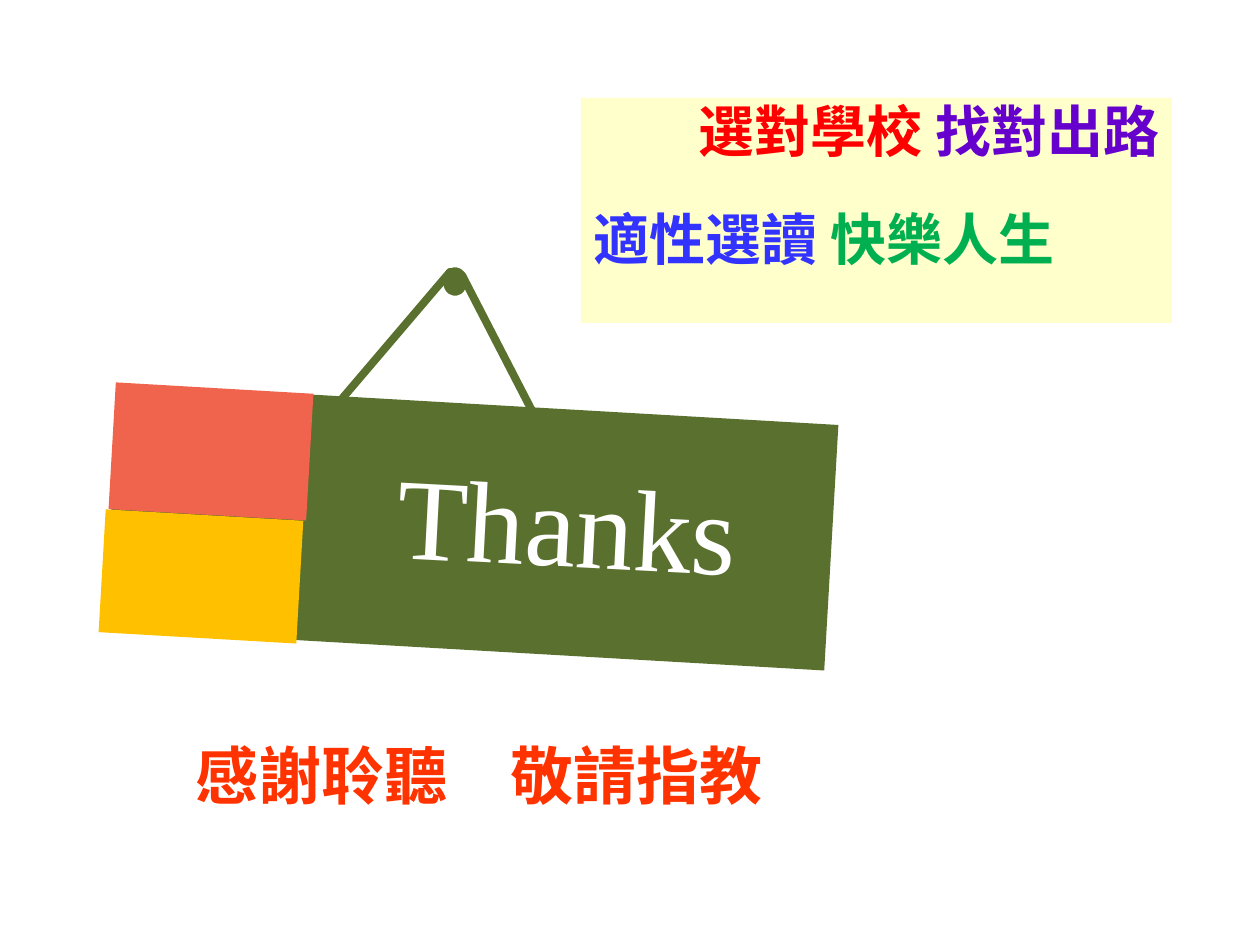
from lxml import etree
from pptx import Presentation
from pptx.dml.color import RGBColor
from pptx.enum.shapes import MSO_SHAPE
from pptx.enum.text import MSO_ANCHOR, MSO_AUTO_SIZE, PP_ALIGN
from pptx.oxml.ns import qn
from pptx.util import Pt

RECTANGLE = MSO_SHAPE.RECTANGLE
ELLIPSE = MSO_SHAPE.OVAL
MIDDLE, TOP = MSO_ANCHOR.MIDDLE, MSO_ANCHOR.TOP
LEFT, CENTER, RIGHT = PP_ALIGN.LEFT, PP_ALIGN.CENTER, PP_ALIGN.RIGHT
NO_FIT = MSO_AUTO_SIZE.NONE
SCALE = 914400 / 126
TILT = 3.3
SERIF, SANS, CJK = "Times New Roman", "Arial", "Noto Sans CJK SC"
COLORS = {
    "board": "5A702E", "amber": "FFC000", "coral": "F0644D", "cream": "FFFFCC",
    "white": "FFFFFF", "orange": "FF3300", "red": "FF0000", "purple": "6600CC",
    "blue": "3333FF", "green": "00B050",
}


def emu(px):
    return round(px * SCALE)


def color(name):
    return RGBColor.from_string(COLORS[name])


class ClosingPage:
    def __init__(self, deck):
        self.page = deck.slides.add_slide(deck.slide_layouts[5])
        self.shapes = self.page.shapes

    def outline(self, shape, name):
        shape.line.color.rgb = color(name)
        shape.line.width = Pt(4.5)

    def shape(self, kind, bounds, fill, rotation=0, line=None):
        shape = self.shapes.add_shape(kind, *map(emu, bounds))
        shape.shadow.inherit = False
        shape.rotation = rotation
        shape.fill.solid()
        shape.fill.fore_color.rgb = color(fill)
        if line:
            self.outline(shape, line)
        else:
            shape.line.fill.background()
        return shape

    def rope(self, points, line):
        builder = self.shapes.build_freeform(*points[0], scale=SCALE)
        builder.add_line_segments(points[1:], close=False)
        rope = builder.convert_to_shape()
        rope.shadow.inherit = False
        rope.fill.background()
        self.outline(rope, line)

    def title(self, text, bounds, rotation):
        title = self.shapes.title
        title.left, title.top, title.width, title.height = map(emu, bounds)
        title.rotation = rotation
        self.shapes._spTree.append(title._element)
        self.set_lines(title, [(CENTER, [(text, "white")])], 66, SERIF, bold=False)

    def text(self, bounds, lines, size, font):
        box = self.shapes.add_textbox(*map(emu, bounds))
        self.set_lines(box, lines, size, font)

    def set_lines(self, shape, lines, size, font, bold=True, anchor=MIDDLE, spacing=1.0, gap=0):
        frame = shape.text_frame
        frame.auto_size = NO_FIT
        frame.word_wrap = True
        frame.vertical_anchor = anchor
        for index, (alignment, spans) in enumerate(lines):
            para = frame.add_paragraph() if index else frame.paragraphs[0]
            para.alignment = alignment
            para.line_spacing = spacing
            para.space_before = Pt(gap if index else 0)
            for text, name in spans:
                span = para.add_run()
                span.text = text
                span.font.size = Pt(size)
                span.font.bold = bold
                span.font.name = font
                span.font.color.rgb = color(name)
                east_asian = etree.SubElement(span.font._element, qn("a:ea"))
                east_asian.set("typeface", CJK)


def main():
    deck = Presentation()
    deck.slide_width, deck.slide_height = emu(1260), emu(945)
    page = ClosingPage(deck)

    page.shape(ELLIPSE, (447, 271, 16, 21), "board", line="board")
    page.rope([(318, 427), (450, 272), (462, 275), (542, 430)], "board")
    page.shape(RECTANGLE, (111, 404, 721, 246), "board", TILT)
    page.title("Thanks", (362, 445, 411, 152), 3)
    page.shape(RECTANGLE, (102, 515, 198, 123), "amber", TILT)
    page.shape(RECTANGLE, (112, 388, 198, 127), "coral", TILT)

    page.text((180, 730, 598, 89), [(CENTER, [("感謝聆聽　敬請指教", "orange")])], 36, SERIF)

    motto = page.shape(RECTANGLE, (581, 98, 591, 225), "cream")
    motto_lines = [
        (RIGHT, [("選對學校 ", "red"), ("找對出路", "purple")]),
        (LEFT, [("適性選讀 ", "blue"), ("快樂人生", "green")]),
    ]
    page.set_lines(motto, motto_lines, 32, SANS, anchor=TOP, spacing=0.9, gap=27)

    deck.save("out.pptx")


if __name__ == "__main__":
    main()
